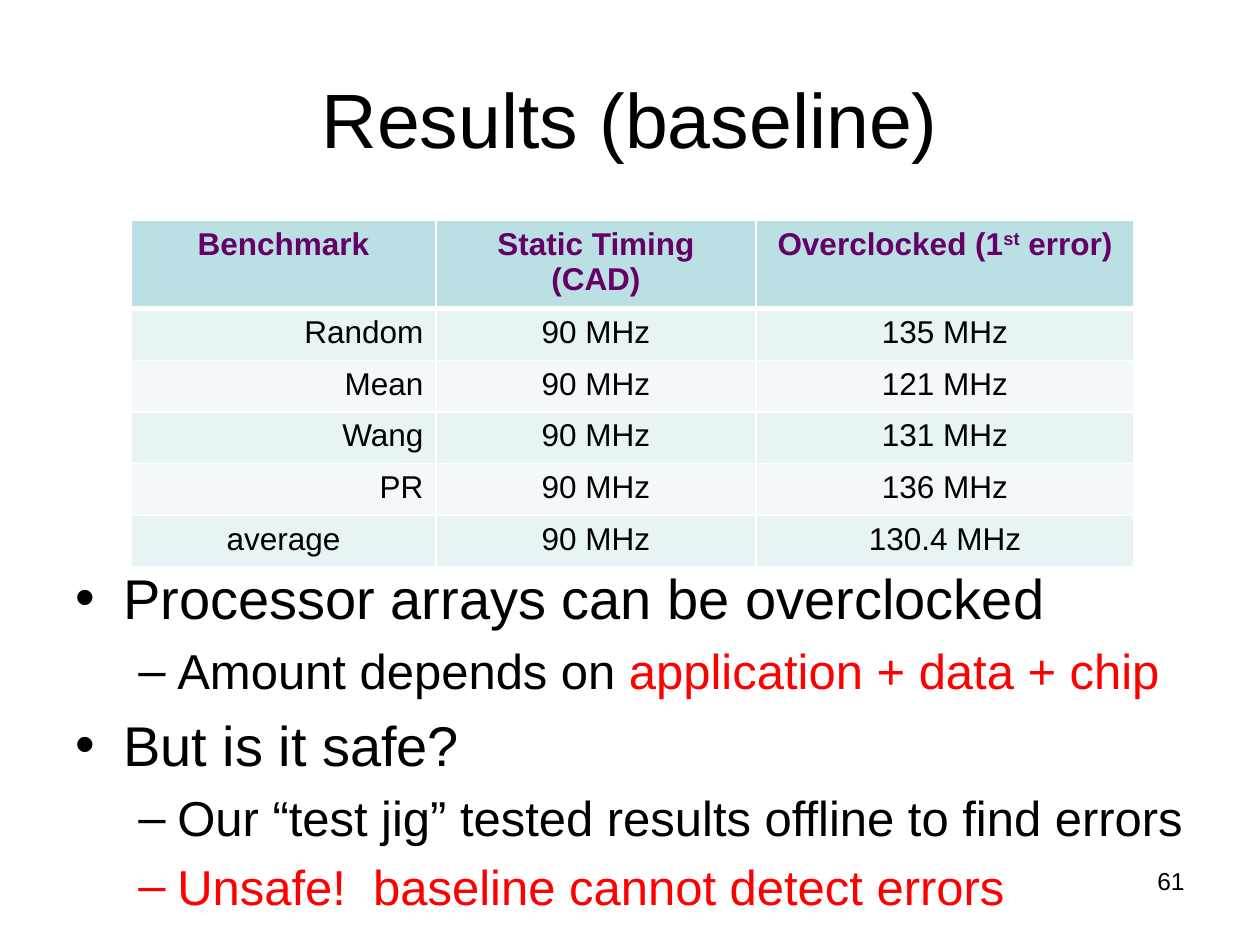
from lxml.etree import SubElement
from pptx import Presentation
from pptx.dml.color import RGBColor
from pptx.enum.text import MSO_ANCHOR, PP_ALIGN
from pptx.oxml.ns import qn
from pptx.util import Inches, Pt

WIDTH, HEIGHT = 10, 7.5
FONT = "Arial"
COLOURS = {
    "text": "000000",
    "alert": "FF0000",
    "heading": "660066",
    "header": "BBE0E3",
    "odd": "E7F3F4",
    "even": "F3F9FA",
    "rule": "FFFFFF",
}
COLUMNS = [2.42, 2.54, 3]
ROW_HEIGHT = 0.41
HEADINGS = [
    ["Benchmark"],
    ["Static Timing (CAD)"],
    ["Overclocked (1", ("st", {"superscript": True}), " error)"],
]
RESULTS = [
    ("Random", "135 MHz"),
    ("Mean", "121 MHz"),
    ("Wang", "131 MHz"),
    ("PR", "136 MHz"),
    ("average", "130.4 MHz"),
]
STATIC_TIMING = "90 MHz"
LEVELS = [
    {"size": 32, "bullet": "•", "margin": 0.38, "hanging": 0.38},
    {"size": 28, "bullet": "–", "margin": 0.81, "hanging": 0.31},
]
POINTS = [
    (0, ["Processor arrays can be overclocked"]),
    (1, ["Amount depends on ", ("application + data + chip", {"colour": "alert"})]),
    (0, ["But is it safe?"]),
    (1, ["Our “test jig” tested results offline to find errors"]),
    (1, [("Unsafe!  baseline cannot detect errors", {"colour": "alert"})]),
]


def colour_of(name):
    """Return the named colour."""
    return RGBColor.from_string(COLOURS[name])


def add_span(para, text, *, size=18, colour="text", bold=False, superscript=False):
    """Append one formatted run to a paragraph."""
    span = para.add_run()
    span.text = text
    span.font.name = FONT
    span.font.size = Pt(size)
    span.font.bold = bold
    span.font.color.rgb = colour_of(colour)
    if superscript:
        span.font._element.set("baseline", "30000")


def write(para, parts, *, align=PP_ALIGN.LEFT, **style):
    """Fill a paragraph with plain strings and (string, format) pairs."""
    para.alignment = align
    for part in parts:
        text, extra = (part, {}) if isinstance(part, str) else part
        add_span(para, text, **{**style, **extra})


def add_box(page, left, top, width, height, anchor=MSO_ANCHOR.TOP):
    """Add a wrapping text box placed by shares of the slide."""
    box = page.shapes.add_textbox(
        Inches(left * WIDTH), Inches(top * HEIGHT),
        Inches(width * WIDTH), Inches(height * HEIGHT),
    )
    box.text_frame.word_wrap = True
    box.text_frame.vertical_anchor = anchor
    return box.text_frame


def set_bullet(para, bullet, margin, hanging):
    """Give a paragraph a hanging bullet and proportional space before."""
    properties = para._p.get_or_add_pPr()
    properties.set("marL", str(Inches(margin)))
    properties.set("indent", str(-Inches(hanging)))
    before = SubElement(properties, qn("a:spcBef"))
    SubElement(before, qn("a:spcPct")).set("val", "20000")
    SubElement(properties, qn("a:buFont")).set("typeface", FONT)
    SubElement(properties, qn("a:buChar")).set("char", bullet)


def add_points(page):
    """Add the bulleted conclusions."""
    frame = add_box(page, 0.05, 0.59, 0.9, 0.3)
    for index, (depth, parts) in enumerate(POINTS):
        para = frame.add_paragraph() if index else frame.paragraphs[0]
        level = LEVELS[depth]
        para.level = depth
        set_bullet(para, level["bullet"], level["margin"], level["hanging"])
        write(para, parts, size=level["size"])


def set_borders(cell, **widths):
    """Draw the cell's edges, one point wide unless told otherwise."""
    properties = cell._tc.get_or_add_tcPr()
    for edge in "LRTB":
        line = SubElement(properties, qn(f"a:ln{edge}"))
        line.set("w", str(Pt(widths.get(edge, 1))))
        fill = SubElement(line, qn("a:solidFill"))
        SubElement(fill, qn("a:srgbClr")).set("val", COLOURS["rule"])


def fill_cell(cell, parts, *, fill, borders, **style):
    """Write and colour one table cell."""
    set_borders(cell, **borders)
    cell.fill.solid()
    cell.fill.fore_color.rgb = colour_of(fill)
    write(cell.text_frame.paragraphs[0], parts, **style)


def add_results(page):
    """Add the table of benchmark frequencies."""
    count = len(RESULTS) + 1
    table = page.shapes.add_table(
        count, len(COLUMNS), Inches(1.04), Inches(1.75),
        Inches(sum(COLUMNS)), Inches(ROW_HEIGHT * count),
    ).table
    for column, width in zip(table.columns, COLUMNS):
        column.width = Inches(width)
    for row in table.rows:
        row.height = Inches(ROW_HEIGHT)
    for column, heading in enumerate(HEADINGS):
        fill_cell(table.cell(0, column), heading, fill="header", borders={"B": 3},
                  align=PP_ALIGN.CENTER, colour="heading", bold=True)
    for row, (name, overclocked) in enumerate(RESULTS, 1):
        for column, text in enumerate([name, STATIC_TIMING, overclocked]):
            is_benchmark = column == 0 and name != "average"
            fill_cell(table.cell(row, column), [text],
                      fill="odd" if row % 2 else "even",
                      borders={"T": 3} if row == 1 else {},
                      align=PP_ALIGN.RIGHT if is_benchmark else PP_ALIGN.CENTER)


def main():
    """Build and save the results slide."""
    deck = Presentation()
    deck.slide_width, deck.slide_height = Inches(WIDTH), Inches(HEIGHT)
    page = deck.slides.add_slide(deck.slide_layouts[6])
    title = add_box(page, 0.05, 0.04, 0.9, 0.17, MSO_ANCHOR.MIDDLE)
    write(title.paragraphs[0], ["Results (baseline)"], size=44, align=PP_ALIGN.CENTER)
    add_results(page)
    number = add_box(page, 0.72, 0.91, 0.23, 0.07)
    write(number.paragraphs[0], ["61"], size=14, align=PP_ALIGN.RIGHT)
    add_points(page)
    deck.save("out.pptx")


if __name__ == "__main__":
    main()
